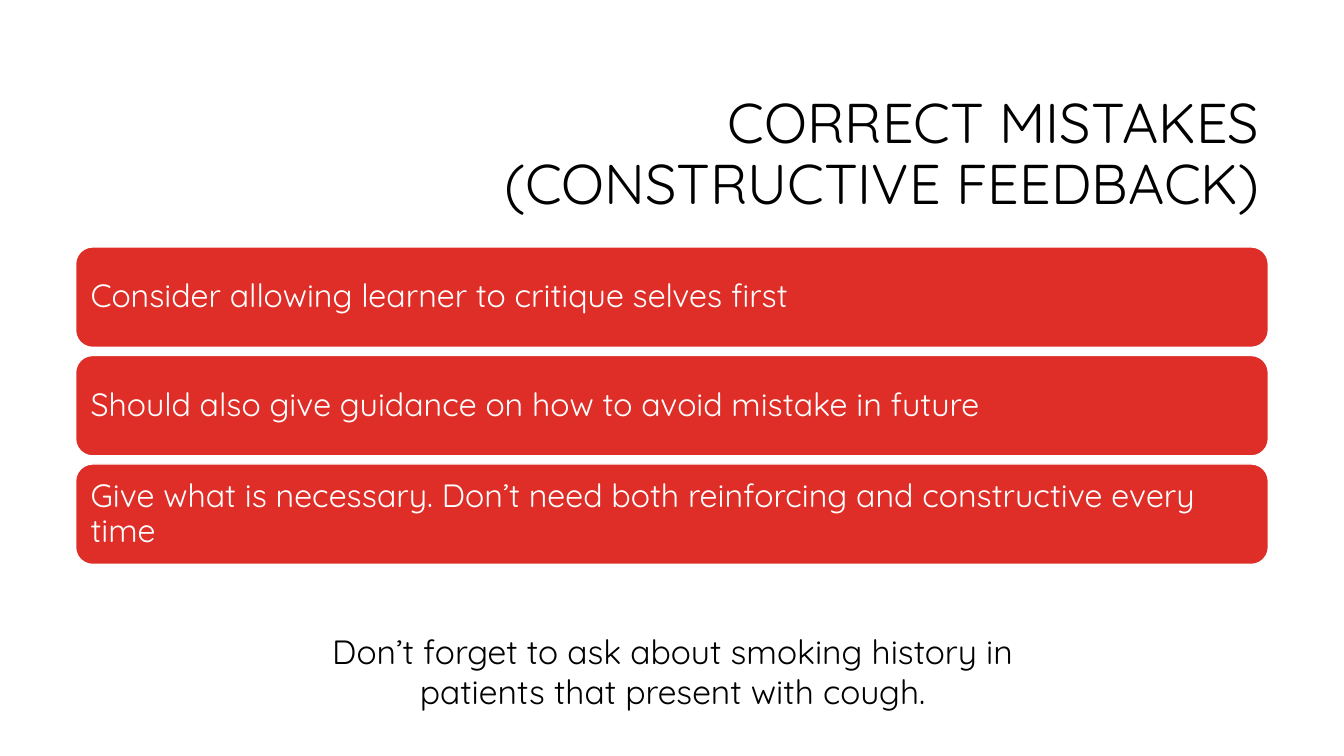
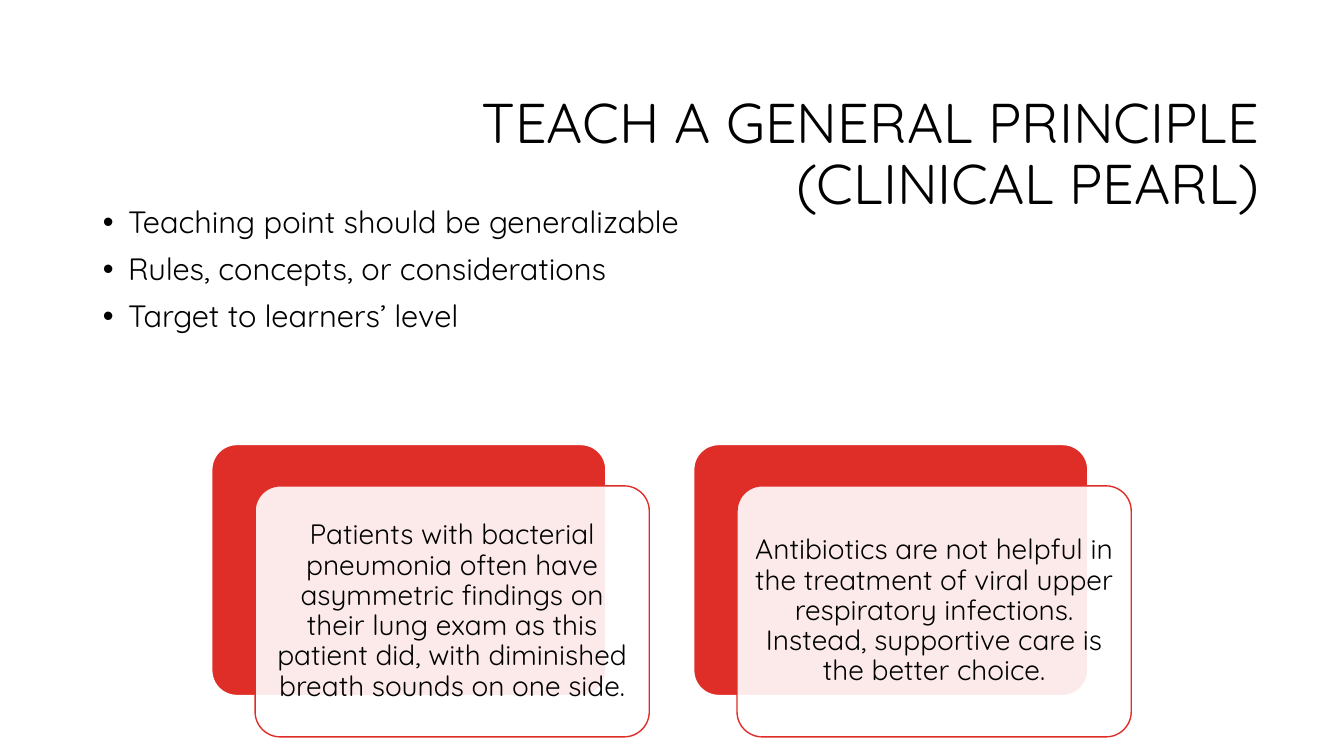
from collections import namedtuple

from lxml.etree import SubElement
from pptx import Presentation
from pptx.dml.color import RGBColor
from pptx.enum.shapes import MSO_SHAPE as Shape
from pptx.enum.text import MSO_ANCHOR as Anchor, MSO_AUTO_SIZE as AutoSize, PP_ALIGN as Align
from pptx.oxml.ns import qn
from pptx.util import Inches, Pt

Box = namedtuple("Box", "left top width height")

# Shared look
FONT = "Quicksand"
RED = RGBColor(0xDF, 0x2E, 0x28)
WHITE = RGBColor(0xFF, 0xFF, 0xFF)
BLACK = RGBColor(0x00, 0x00, 0x00)
SLIDE_WIDTH, SLIDE_HEIGHT = 13.33, 7.5
TITLE_BOX = Box(3.17, 0.84, 9.42, 1.41)
TITLE_ONLY, TITLE_AND_BODY = 5, 1


def place(item, box):
    """Move a shape or placeholder into a box given in inches."""
    item.left, item.top, item.width, item.height = map(Inches, box)


def write(frame, text, size=20, color=BLACK, align=Align.LEFT, anchor=Anchor.TOP,
          line_spacing=0.9, space_before=0, bullet=None, margins=(0.1, 0.05)):
    """Fill a text frame, one paragraph for each line of the text."""
    frame.word_wrap = True
    frame.auto_size = AutoSize.NONE
    frame.vertical_anchor = anchor
    frame.margin_left = frame.margin_right = Inches(margins[0])
    frame.margin_top = frame.margin_bottom = Inches(margins[1])
    for index, line in enumerate(text.split("\n")):
        para = frame.add_paragraph() if index else frame.paragraphs[0]
        para.alignment = align
        para.line_spacing = line_spacing
        para.space_before = Pt(space_before if index else 0)
        para.space_after = Pt(0)
        if bullet:
            properties = para._p.get_or_add_pPr()
            properties.set("marL", str(Inches(0.25)))
            properties.set("indent", str(-Inches(0.25)))
            SubElement(properties, qn("a:buFont"), typeface="Arial")
            SubElement(properties, qn("a:buChar"), char=bullet)
        span = para.add_run()
        span.text = line
        span.font.name = FONT
        span.font.size = Pt(size)
        span.font.bold = False
        span.font.color.rgb = color


def add_page(deck, layout, title):
    """Add a slide with the shared title style."""
    page = deck.slides.add_slide(deck.slide_layouts[layout])
    place(page.shapes.title, TITLE_BOX)
    write(page.shapes.title.text_frame, title, size=40, align=Align.RIGHT, anchor=Anchor.MIDDLE)
    return page


def add_panel(page, box, fill, line, corner, opacity=100):
    """Draw a rounded panel."""
    panel = page.shapes.add_shape(Shape.ROUNDED_RECTANGLE, *map(Inches, box))
    panel.shadow.inherit = False
    panel.adjustments[0] = corner
    panel.fill.solid()
    panel.fill.fore_color.rgb = fill
    panel.line.color.rgb = line
    panel.line.width = Pt(1)
    if opacity < 100:
        color = panel._element.spPr.find(qn("a:solidFill"))[0]
        SubElement(color, qn("a:alpha"), val=str(opacity * 1000))
    return panel


def add_bars(page, box, texts, gap=0.08):
    """Stack equal bars down the box."""
    height = (box.height - gap * (len(texts) - 1)) / len(texts)
    for row, text in enumerate(texts):
        bar_box = Box(box.left, box.top + row * (height + gap), box.width, height)
        bar = add_panel(page, bar_box, RED, WHITE, corner=0.17)
        write(bar.text_frame, text, size=23, color=WHITE, anchor=Anchor.MIDDLE, margins=(0.1, 0.1))


def add_card(page, box, text, shift=(0.43, 0.41)):
    """Draw a red panel with a translucent text panel shifted over it."""
    width, height = box.width - shift[0], box.height - shift[1]
    add_panel(page, Box(box.left, box.top, width, height), RED, WHITE, corner=0.1)
    front_box = Box(box.left + shift[0], box.top + shift[1], width, height)
    front = add_panel(page, front_box, WHITE, RED, corner=0.1, opacity=90)
    write(front.text_frame, text, align=Align.CENTER, anchor=Anchor.MIDDLE, margins=(0.08, 0.08))


def add_cards(page, box, texts, gap=0.44):
    """Set equal cards side by side in the box."""
    width = (box.width - gap * (len(texts) - 1)) / len(texts)
    for column, text in enumerate(texts):
        add_card(page, Box(box.left + column * (width + gap), box.top, width, box.height), text)


def add_mistakes_page(deck):
    page = add_page(deck, TITLE_ONLY, "CORRECT MISTAKES (CONSTRUCTIVE FEEDBACK)")
    # Advice bars
    add_bars(page, Box(0.75, 2.45, 11.83, 3.15), [
        "Consider allowing learner to critique selves first",
        "Should also give guidance on how to avoid mistake in future",
        "Give what is necessary. Don’t need both reinforcing and constructive every time",
    ])
    # Sample feedback
    example = page.shapes.add_textbox(*map(Inches, Box(2.7, 6.21, 7.94, 0.91)))
    write(example.text_frame,
          "Don’t forget to ask about smoking history in patients that present with cough.",
          size=24, align=Align.CENTER, line_spacing=1.0)


def add_principle_page(deck):
    page = add_page(deck, TITLE_AND_BODY, "TEACH A GENERAL PRINCIPLE (CLINICAL PEARL)")
    # Teaching points
    points = page.placeholders[1]
    place(points, Box(0.92, 2, 11.5, 1.87))
    write(points.text_frame,
          "Teaching point should be generalizable\n"
          "Rules, concepts, or considerations\n"
          "Target to learners’ level",
          size=22, space_before=10, bullet="•")
    # Sample pearls
    add_cards(page, Box(2.1, 4.41, 9.12, 2.9), [
        "Patients with bacterial pneumonia often have asymmetric findings on their lung exam "
        "as this patient did, with diminished breath sounds on one side.",
        "Antibiotics are not helpful in the treatment of viral upper respiratory infections. "
        "Instead, supportive care is the better choice.",
    ])


def main():
    deck = Presentation()
    deck.slide_width, deck.slide_height = Inches(SLIDE_WIDTH), Inches(SLIDE_HEIGHT)
    add_mistakes_page(deck)
    add_principle_page(deck)
    deck.save("out.pptx")


if __name__ == "__main__":
    main()
